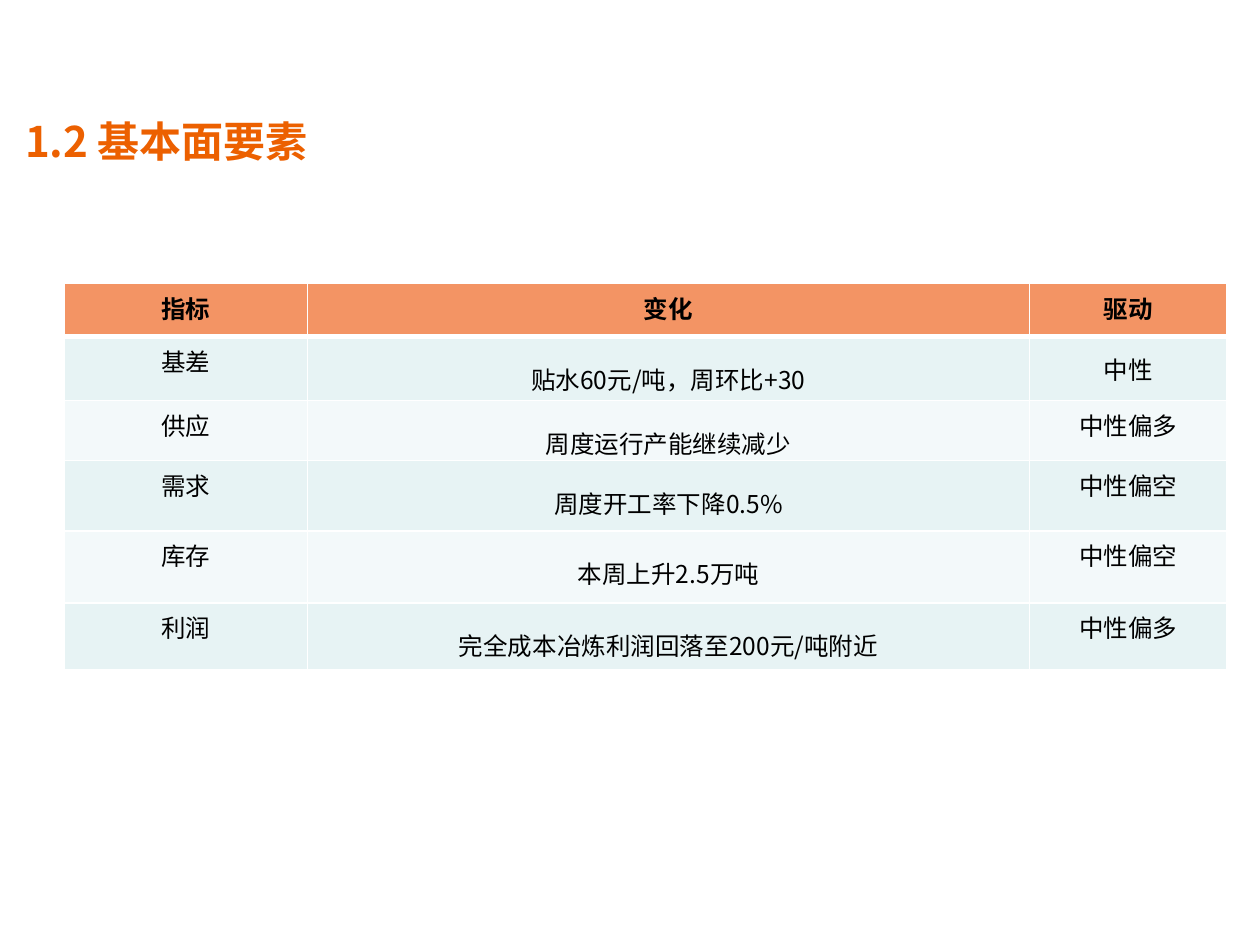
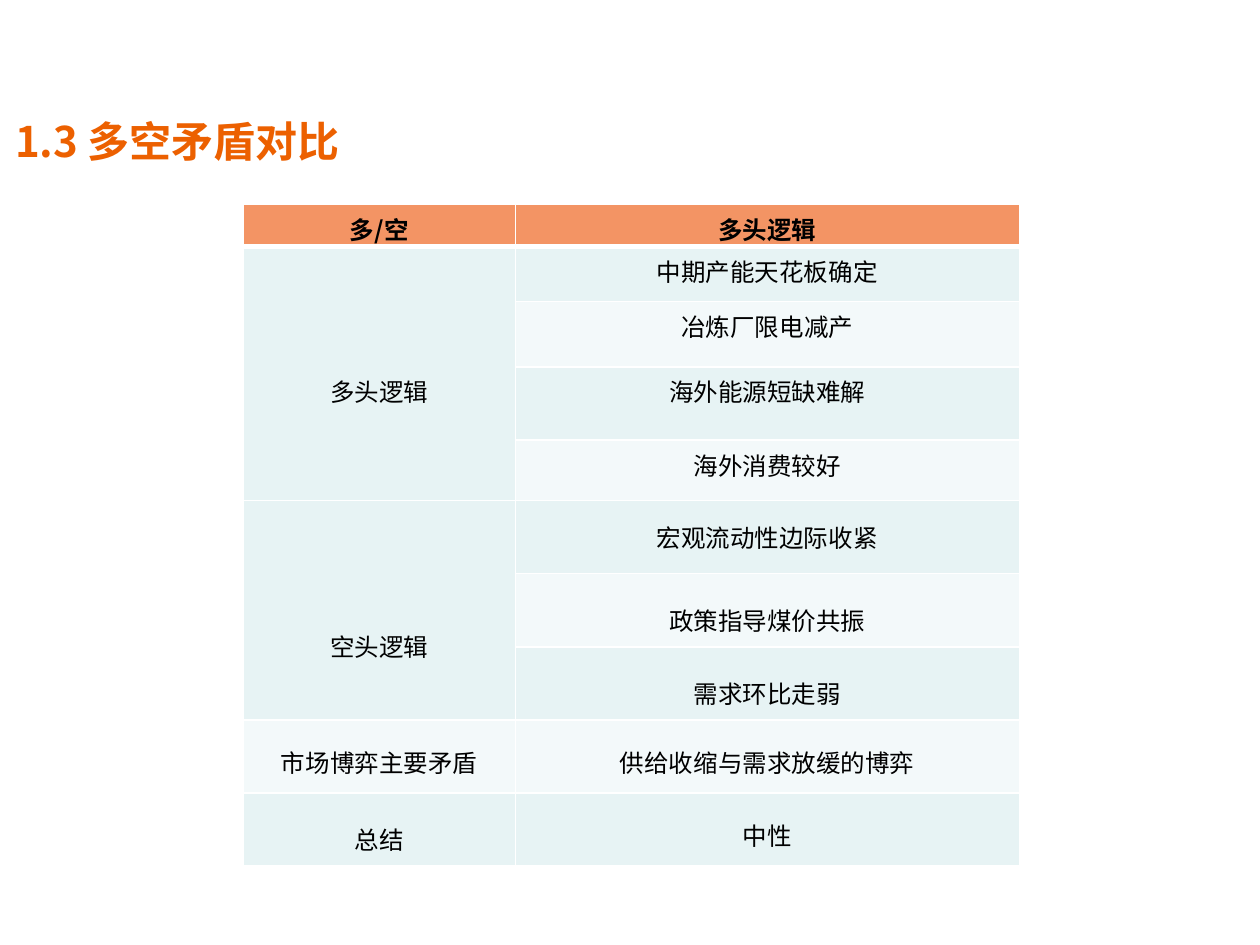
from lxml import etree
from pptx import Presentation
from pptx.dml.color import RGBColor
from pptx.enum import text as txt
from pptx.oxml import ns
from pptx.util import Inches, Pt

FONT = "Noto Sans CJK SC"
ORANGE = RGBColor(0xEC, 0x60, 0x00)
HEADER_FILL = RGBColor(0xF3, 0x94, 0x64)
BANDS = (RGBColor(0xF3, 0xF9, 0xFA), RGBColor(0xE7, 0xF3, 0xF4))
BLACK = RGBColor(0, 0, 0)
WHITE = RGBColor(0xFF, 0xFF, 0xFF)

TITLE_ONLY = 5
CENTERED = dict(anchor=txt.MSO_ANCHOR.MIDDLE, margins=(0, 0, 0, 0))
CELL_MARGINS = (0.1, 0.05, 0.1, 0)  # left, top, right, bottom
GROUP_LABEL = dict(spacing=1.1, margins=(0.1, 0.98, 0.1, 0))


def write_text(frame, content, size=14, color=BLACK, bold=False,
               align=txt.PP_ALIGN.CENTER, spacing=1.0):
    """Fill a text frame with one formatted paragraph."""
    paragraph = frame.paragraphs[0]
    paragraph.alignment = align
    paragraph.line_spacing = spacing
    paragraph.space_before = Pt(0)
    run = paragraph.add_run()
    run.text = content
    font = run.font
    font.size, font.bold, font.name = Pt(size), bold, FONT
    font.color.rgb = color
    east_asian = etree.SubElement(run._r.get_or_add_rPr(), ns.qn("a:ea"))
    east_asian.set("typeface", FONT)


def set_borders(cell, top=1, bottom=1):
    properties = cell._tc.get_or_add_tcPr()
    for side, width in (("L", 1), ("R", 1), ("T", top), ("B", bottom)):
        line = etree.SubElement(properties, ns.qn(f"a:ln{side}"), w=str(Pt(width)))
        fill = etree.SubElement(line, ns.qn("a:solidFill"))
        etree.SubElement(fill, ns.qn("a:srgbClr"), val=str(WHITE))


def add_titled_slide(deck, heading, left):
    slide = deck.slides.add_slide(deck.slide_layouts[TITLE_ONLY])
    title = slide.shapes.title
    title.left, title.top = Inches(left), Inches(0.92)
    title.width, title.height = Inches(7.46), Inches(0.4)
    frame = title.text_frame
    frame.margin_left = frame.margin_right = frame.margin_top = frame.margin_bottom = 0
    frame.vertical_anchor = txt.MSO_ANCHOR.MIDDLE
    frame.auto_size = txt.MSO_AUTO_SIZE.NONE
    write_text(frame, heading, size=24, color=ORANGE, bold=True,
               align=txt.PP_ALIGN.LEFT)
    return slide


def fill_cell(cell, row, content, anchor=txt.MSO_ANCHOR.TOP,
              margins=CELL_MARGINS, spacing=1.0):
    """Style a cell by its row; the header has a thick rule below it."""
    set_borders(cell, top=3 if row == 1 else 1, bottom=3 if row == 0 else 1)
    cell.fill.solid()
    cell.fill.fore_color.rgb = BANDS[row % 2] if row else HEADER_FILL
    cell.vertical_anchor = anchor
    (cell.margin_left, cell.margin_top,
     cell.margin_right, cell.margin_bottom) = map(Inches, margins)
    if content:
        write_text(cell.text_frame, content, bold=row == 0, spacing=spacing)


def add_banded_table(slide, left, top, widths, heights, rows, formats, merges=()):
    """Place a table; formats maps (row, column) to cell options."""
    table = slide.shapes.add_table(
        len(rows), len(widths), Inches(left), Inches(top),
        Inches(sum(widths)), Inches(sum(heights))).table
    table.first_row = table.horz_banding = False
    for column, width in zip(table.columns, widths):
        column.width = Inches(width)
    for table_row, height in zip(table.rows, heights):
        table_row.height = Inches(height)
    for r, contents in enumerate(rows):
        for c, content in enumerate(contents):
            fill_cell(table.cell(r, c), r, content, **formats.get((r, c), {}))
    for first, last in merges:
        table.cell(first, 0).merge(table.cell(last, 0))


def build_fundamentals(deck):
    slide = add_titled_slide(deck, "1.2 基本面要素", 0.2)
    rows = [
        ("指标", "变化", "驱动"),
        ("基差", "贴水60元/吨，周环比+30", "中性"),
        ("供应", "周度运行产能继续减少", "中性偏多"),
        ("需求", "周度开工率下降0.5%", "中性偏空"),
        ("库存", "本周上升2.5万吨", "中性偏空"),
        ("利润", "完全成本冶炼利润回落至200元/吨附近", "中性偏多"),
    ]
    formats = {(r, 1): dict(spacing=1.5) for r in range(1, len(rows))}
    formats[1, 2] = CENTERED
    add_banded_table(slide, 0.51, 2.25, [1.93, 5.73, 1.57],
                     [0.42, 0.51, 0.47, 0.56, 0.57, 0.53], rows, formats)


def build_bull_bear(deck):
    slide = add_titled_slide(deck, "1.3 多空矛盾对比", 0.12)
    rows = [
        ("多/空", "多头逻辑"),
        ("多头逻辑", "中期产能天花板确定"),
        ("", "冶炼厂限电减产"),
        ("", "海外能源短缺难解"),
        ("", "海外消费较好"),
        ("空头逻辑", "宏观流动性边际收紧"),
        ("", "政策指导煤价共振"),
        ("", "需求环比走弱"),
        ("市场博弈主要矛盾", "供给收缩与需求放缓的博弈"),
        ("总结", "中性"),
    ]
    loose, looser = dict(spacing=1.5), dict(spacing=1.6)
    formats = {
        (1, 0): GROUP_LABEL, (5, 0): GROUP_LABEL, (5, 1): CENTERED,
        (6, 1): looser, (7, 1): looser, (9, 0): looser,
        (8, 0): loose, (8, 1): loose, (9, 1): loose,
    }
    add_banded_table(slide, 1.93, 1.62, [2.16, 4],
                     [0.33, 0.44, 0.52, 0.58, 0.48] + [0.58] * 5,
                     rows, formats, merges=[(1, 4), (5, 7)])


def main():
    deck = Presentation()
    deck.slide_width, deck.slide_height = Inches(10), Inches(7.5)
    build_fundamentals(deck)
    build_bull_bear(deck)
    deck.save("out.pptx")


if __name__ == "__main__":
    main()
